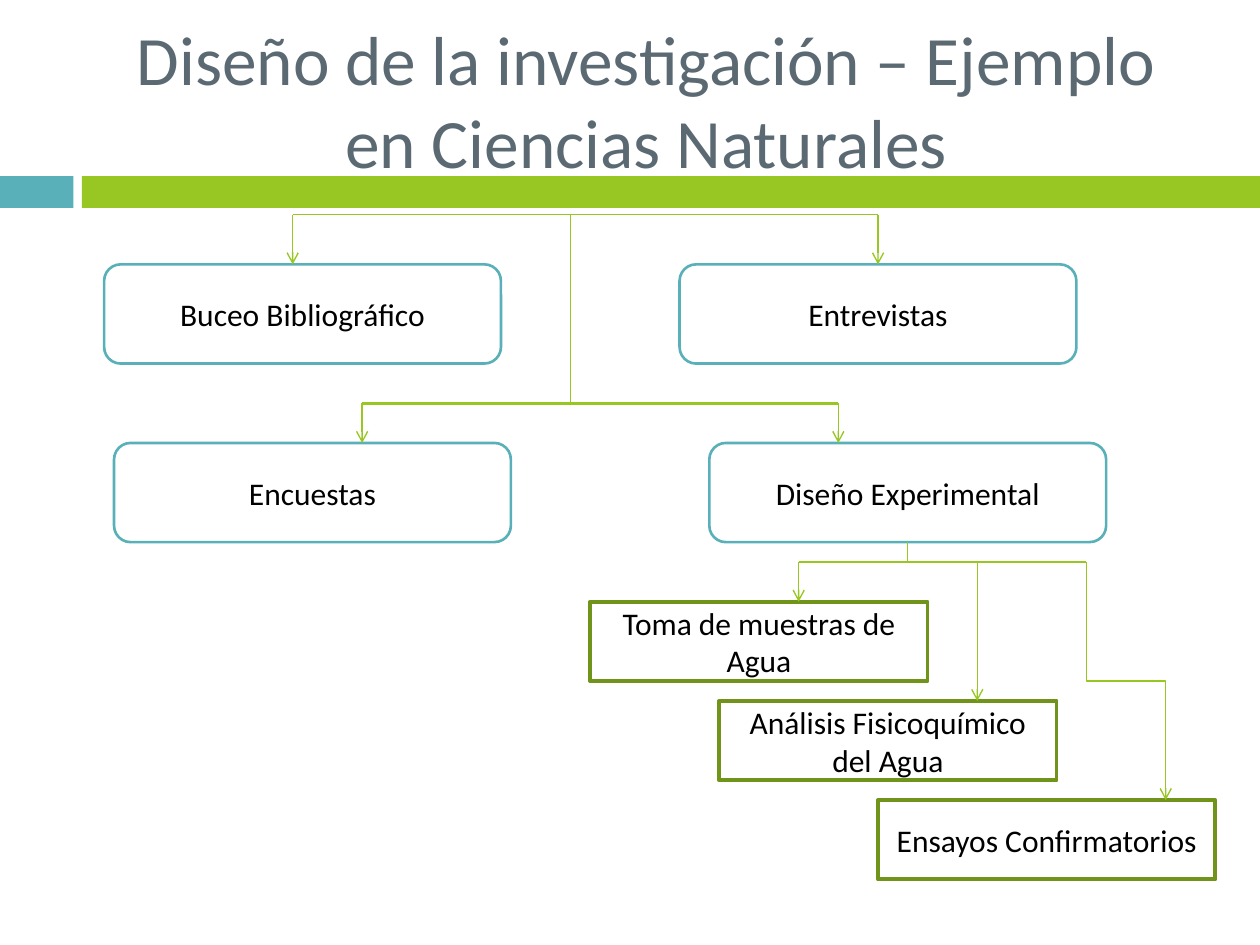
from dataclasses import dataclass

from lxml import etree
from pptx import Presentation
from pptx.dml.color import RGBColor
from pptx.enum.shapes import MSO_CONNECTOR, MSO_SHAPE
from pptx.enum.text import MSO_ANCHOR, PP_ALIGN
from pptx.oxml.ns import qn
from pptx.util import Cm, Pt

STRAIGHT, ELBOW = MSO_CONNECTOR.STRAIGHT, MSO_CONNECTOR.ELBOW
RECTANGLE, ROUNDED = MSO_SHAPE.RECTANGLE, MSO_SHAPE.ROUNDED_RECTANGLE
MIDDLE, CENTER = MSO_ANCHOR.MIDDLE, PP_ALIGN.CENTER
TOP, BOTTOM = 0, 2


@dataclass(frozen=True)
class Theme:
    """Colours, font, type sizes and line widths of the slide."""
    teal: str = "59B0B9"
    green: str = "98C723"
    dark_green: str = "70931A"
    slate: str = "5B6973"
    black: str = "000000"
    font: str = "Calibri"
    title_size: float = 39.6
    body_size: float = 18
    thin: float = 0.79
    medium: float = 1.5
    thick: float = 2.25


THEME = Theme()


def write_text(shape, text, size=THEME.body_size, color=THEME.black):
    """Write one centred paragraph in a shape."""
    frame = shape.text_frame
    frame.word_wrap = True
    frame.vertical_anchor = MIDDLE
    para = frame.paragraphs[0]
    para.alignment = CENTER
    span = para.add_run()
    span.text = text
    span.font.name = THEME.font
    span.font.size = Pt(size)
    span.font.color.rgb = RGBColor.from_string(color)


def add_box(page, kind, box, fill=None, line=None, width=THEME.medium):
    """Add a flat shape with an optional fill and outline."""
    shape = page.shapes.add_shape(kind, *map(Cm, box))
    shape.shadow.inherit = False
    if fill:
        shape.fill.solid()
        shape.fill.fore_color.rgb = RGBColor.from_string(fill)
    else:
        shape.fill.background()
    if line:
        shape.line.color.rgb = RGBColor.from_string(line)
        shape.line.width = Pt(width)
    else:
        shape.line.fill.background()
    return shape


def add_line(page, start, end, kind=STRAIGHT, width=THEME.thin, arrow=False):
    """Add a green connector, with an open arrowhead if asked."""
    line = page.shapes.add_connector(kind, *map(Cm, (*start, *end)))
    line.line.color.rgb = RGBColor.from_string(THEME.green)
    line.line.width = Pt(width)
    properties = line._element.spPr
    if arrow:
        etree.SubElement(properties.find(qn("a:ln")), qn("a:tailEnd"), type="arrow")
    etree.SubElement(properties, qn("a:effectLst"))
    return line


def add_vertical_elbow(page, start, end):
    """Add an elbow arrow that leaves and arrives vertically."""
    (x1, y1), (x2, y2) = start, end
    middle_x, middle_y = (x1 + x2) / 2, (y1 + y2) / 2
    half_run, half_rise = (y2 - y1) / 2, (x2 - x1) / 2
    elbow = add_line(page, (middle_x + half_run, middle_y - half_rise),
                     (middle_x - half_run, middle_y + half_rise),
                     kind=ELBOW, arrow=True)
    elbow.rotation = 270 if hasattr(elbow, "rotation") else 0
    elbow._element.spPr.find(qn("a:xfrm")).set("rot", "16200000")


def add_header(page, box):
    """Place the title above a two-colour band."""
    left, top, width, height = box
    band_top, band_height, tab, gap = top + 3.55, 0.64, 1.48, 0.17
    add_box(page, RECTANGLE, (left, band_top, tab, band_height), fill=THEME.teal)
    add_box(page, RECTANGLE,
            (left + tab + gap, band_top, width - tab - gap, band_height),
            fill=THEME.green)
    title = page.shapes.add_textbox(
        *map(Cm, (left + 1.7, top + 0.64, 22.66, height - 1.45)))
    write_text(title, "Diseño de la investigación – Ejemplo en Ciencias Naturales",
               size=THEME.title_size, color=THEME.slate)


def add_branch(page, box, drop, nodes, bar_width=THEME.thin):
    """Hang rounded boxes from a bar; return the boxes."""
    left, top, width, height = box
    node_width = 8
    arrows = [left + arrow for _, _, arrow in nodes]
    add_line(page, (arrows[0], top), (arrows[-1], top), width=bar_width)
    shapes = []
    for (text, offset, _), arrow_x in zip(nodes, arrows):
        node_left, node_top = left + offset, top + drop
        node = add_box(page, ROUNDED, (node_left, node_top, node_width, height - drop),
                       line=THEME.teal)
        write_text(node, text)
        arrow = add_line(page, (arrow_x, top), (arrow_x, node_top), arrow=True)
        if abs(arrow_x - node_left - node_width / 2) < 0.01:
            arrow.end_connect(node, TOP)
        shapes.append(node)
    return shapes


def add_steps(page, box, parent):
    """Place the staggered steps below the experimental design box."""
    left, top, width, height = box
    bar_y, first, pitch = top + 0.4, top + 1.2, 2
    stem = add_line(page, (left + 6.4, top), (left + 6.4, bar_y))
    stem.begin_connect(parent, BOTTOM)
    add_line(page, (left + 4.2, bar_y), (left + 10, bar_y))
    steps = (("Toma de muestras de Agua", 0),
             ("Análisis Fisicoquímico del Agua", 2.6),
             ("Ensayos Confirmatorios", 5.8))
    for row, (text, offset) in enumerate(steps):
        step = add_box(page, RECTANGLE, (left + offset, first + row * pitch, 6.8, 1.6),
                       line=THEME.dark_green, width=THEME.thick)
        write_text(step, text)
    for row, arrow_x in enumerate((left + 4.2, left + 7.8)):
        add_line(page, (arrow_x, bar_y), (arrow_x, first + row * pitch), arrow=True)
    add_vertical_elbow(page, (left + 10, bar_y), (left + 11.6, first + 2 * pitch))


def main():
    """Build and save the slide."""
    deck = Presentation()
    deck.slide_width, deck.slide_height = Cm(25.4), Cm(19.05)
    page = deck.slides.add_slide(deck.slide_layouts[6])
    add_header(page, (0, 0, 25.4, 4.19))
    add_branch(page, (2.1, 4.33, 19.6, 3), 1,
               (("Buceo Bibliográfico", 0, 3.8), ("Entrevistas", 11.6, 15.6)))
    add_line(page, (11.5, 4.33), (11.5, 8.13))
    _, design = add_branch(page, (2.3, 8.13, 20, 2.8), 0.8,
                           (("Encuestas", 0, 5), ("Diseño Experimental", 12, 14.6)),
                           bar_width=THEME.medium)
    add_steps(page, (11.9, 10.93, 12.6, 6.8), design)
    deck.save("out.pptx")


if __name__ == "__main__":
    main()
